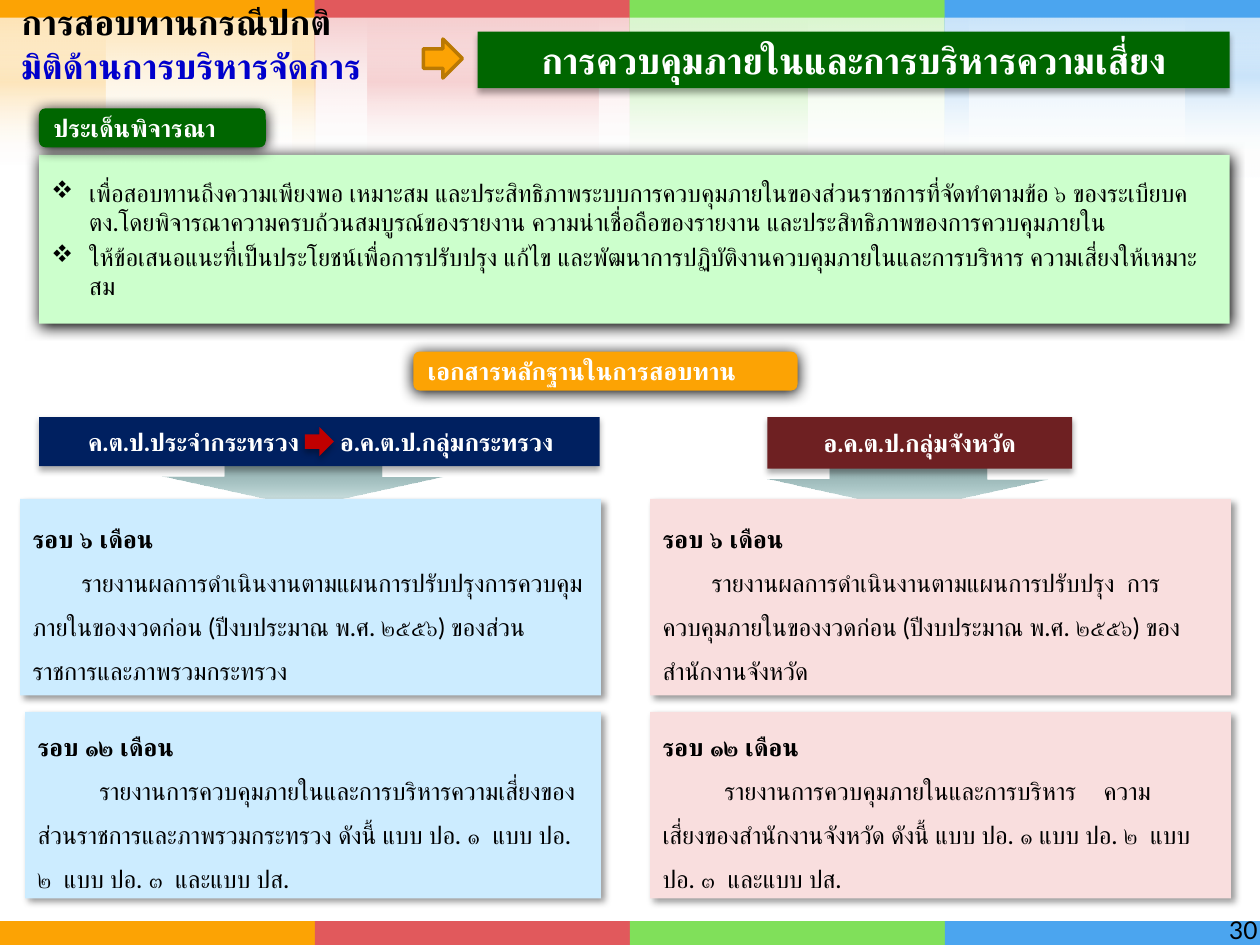
from lxml.etree import SubElement as Sub
from pptx import Presentation
from pptx.dml.color import RGBColor as Rgb
from pptx.enum.shapes import MSO_SHAPE as Kind
from pptx.enum.text import MSO_ANCHOR as Anchor, MSO_AUTO_SIZE as Auto, PP_ALIGN as Align
from pptx.oxml.ns import qn
from pptx.util import Inches, Pt

theme = dict(
    font="Lato", body=14, head=20, main=21,
    gold="FCA304", red="E1595C", lime="80E05A", sky="4BA5EF",
    black="000000", white="FFFFFF", blue="0000CC", green="006600",
    mint="CCFFCC", ice="CCECFF", rose="F9DEDE", navy="002060",
    wine="6E2022", arrow="C00000", edge="BA7903", gray="969696", teal="006666",
)
shades = dict(soft=(32, 3.5, 2.2, 90), card=(40, 4, 3, 45), hard=(100, 8.5, 1, 90))


def draw(kind, box, fill, shade=None):
    shape = slide.shapes.add_shape(kind, *map(Inches, box))
    shape.shadow.inherit = False
    shape.line.fill.background()
    props = shape._element.spPr
    if isinstance(fill, str):
        shape.fill.solid()
        shape.fill.fore_color.rgb = Rgb.from_string(theme[fill])
    else:
        shape.fill.gradient()
        shape.fill.gradient_angle = 270
        stops = props.find(qn("a:gradFill")).find(qn("a:gsLst"))
        for stop in list(stops):
            stops.remove(stop)
        for place, name, alpha in fill:
            stop = Sub(stops, qn("a:gs"), pos=str(place * 1000))
            tint = Sub(stop, qn("a:srgbClr"), val=theme[name])
            Sub(tint, qn("a:alpha"), val=str(alpha * 1000))
    if shade:
        alpha, blur, dist, angle = shades[shade]
        cast = Sub(props.find(qn("a:effectLst")), qn("a:outerShdw"),
                   blurRad=str(Pt(blur)), dist=str(Pt(dist)),
                   dir=str(angle * 60000), rotWithShape="0")
        tint = Sub(cast, qn("a:srgbClr"), val=theme["black"])
        Sub(tint, qn("a:alpha"), val=str(alpha * 1000))
    return shape


def write(shape, lines, anchor=Anchor.MIDDLE, wrap=True):
    frame = shape.text_frame
    for key, val in dict(word_wrap=wrap, auto_size=Auto.NONE, vertical_anchor=anchor).items():
        setattr(frame, key, val)
    for num, (text, look) in enumerate(lines):
        para = frame.add_paragraph() if num else frame.paragraphs[0]
        para.text = text
        props = para._p.get_or_add_pPr()
        first, left = look.get("first", 0), look.get("left", 0)
        props.set("marL", str(Inches(left)))
        props.set("indent", str(Inches(first)))
        form = dict(alignment=look.get("align", Align.LEFT), line_spacing=look.get("space", 1.0),
                    space_before=Pt(look.get("gap", 0) if num else 0))
        for key, val in form.items():
            setattr(para, key, val)
        if "bullet" in look:
            Sub(props, qn("a:buFont"), typeface="Wingdings", charset="2")
            Sub(props, qn("a:buChar"), char=look["bullet"])
        if "tab" in look:
            tabs = Sub(props, qn("a:tabLst"))
            Sub(tabs, qn("a:tab"), pos=str(Inches(look["tab"])), algn="l")
        form = dict(name=theme["font"], size=Pt(look.get("size", theme["body"])),
                    bold=look.get("bold", False))
        for run in para.runs:
            for key, val in form.items():
                setattr(run.font, key, val)
            run.font.color.rgb = Rgb.from_string(theme[look.get("color", "black")])


deck = Presentation()
deck.slide_width, deck.slide_height = Inches(10), Inches(7.5)
slide = deck.slides.add_slide(deck.slide_layouts[5])

bands = [
    ("gold", 1.31, [(2.32, 0.18, 1.31), (0, 0.84, 1.31)]),
    ("red", 1.31, [(2.92, 1.83, 1.31)]),
    ("lime", 1.37, [(5, 1.41, 1.37)]),
    ("sky", 1.43, [(7.5, 0.19, 1.22), (9.41, 0.59, 1.22)]),
]
for num, (hue, high, stripes) in enumerate(bands):
    left = num * 2.5
    fade = [(0, hue, 20), (100, "white", 0)]
    glow = [(0, "white", 0), (50, hue, 20), (100, "white", 0)]
    draw(Kind.RECTANGLE, (left, 0, 2.5, high), fade)
    for x, wide, tall in stripes:
        draw(Kind.RECTANGLE, (x, 0, wide, tall), glow)
    draw(Kind.RECTANGLE, (left, 0, 2.5, high), fade)
    for top, tall in [(0, 0.14), (7.31, 0.19)]:
        draw(Kind.RECTANGLE, (left, top, 2.5, tall), hue)

for left, top in [(6.09, 3.54), (1.29, 3.52)]:
    down = draw(Kind.DOWN_ARROW, (left, top, 2.23, 0.5), [(0, "gray", 100), (100, "teal", 10)])
    down.adjustments[0], down.adjustments[1] = 0.56, 0.48

page = slide.shapes.add_textbox(*map(Inches, (8.86, 7.21, 1.22, 0.44)))
write(page, [("30", dict(align=Align.RIGHT))], Anchor.TOP)

label = dict(bold=True, color="white")
mid = dict(label, align=Align.CENTER)
banner = draw(Kind.RECTANGLE, (3.79, 0.25, 5.97, 0.45), "green", "soft")
write(banner, [("การควบคุมภายในและการบริหารความเสี่ยง", dict(mid, size=theme["main"]))], Anchor.TOP)

point = draw(Kind.RIGHT_ARROW, (3.36, 0.31, 0.31, 0.31), "gold")
point.line.color.rgb = Rgb.from_string(theme["edge"])
point.line.width = Pt(2)

item = dict(left=0.3, first=-0.3, gap=3, bullet="v")
goals = draw(Kind.RECTANGLE, (0.31, 1.23, 9.45, 1.34), "mint", "hard")
write(goals, [
    ("เพื่อสอบทานถึงความเพียงพอ เหมาะสม และประสิทธิภาพระบบการควบคุมภายในของส่วนราชการที่จัดทำตามข้อ ๖ ของระเบียบคตง.โดยพิจารณาความครบถ้วนสมบูรณ์ของรายงาน ความน่าเชื่อถือของรายงาน และประสิทธิภาพของการควบคุมภายใน", item),
    ("ให้ข้อเสนอแนะที่เป็นประโยชน์เพื่อการปรับปรุง แก้ไข และพัฒนาการปฏิบัติงานควบคุมภายในและการบริหาร ความเสี่ยงให้เหมาะสม", item),
])

tags = [
    ((0.31, 0.86, 1.8, 0.31), "green", "ประเด็นพิจารณา"),
    ((3.28, 2.79, 3.05, 0.31), "gold", "เอกสารหลักฐานในการสอบทาน"),
]
for box, fill, text in tags:
    write(draw(Kind.ROUNDED_RECTANGLE, box, fill, "hard"), [(text, label)])

team = draw(Kind.RECTANGLE, (0.31, 3.31, 4.45, 0.39), "navy", "soft")
team.text_frame.margin_left = Inches(0.39)
write(team, [("ค.ต.ป.ประจำกระทรวง\tอ.ค.ต.ป.กลุ่มกระทรวง", dict(label, tab=2))])
draw(Kind.RIGHT_ARROW, (2.42, 3.39, 0.23, 0.23), "arrow", "soft")
area = draw(Kind.RECTANGLE, (6.09, 3.31, 2.42, 0.41), "wine", "soft")
write(area, [("อ.ค.ต.ป.กลุ่มจังหวัด", mid)])

half = ("รอบ ๖ เดือน", 3.96, 1.56, 0.39)
year = ("รอบ ๑๒ เดือน", 5.65, 1.48, 0.49)
cards = [
    (half, 0.16, 4.61, "ice", "รายงานผลการดำเนินงานตามแผนการปรับปรุงการควบคุมภายในของงวดก่อน (ปีงบประมาณ พ.ศ. ๒๕๕๖) ของส่วนราชการและภาพรวมกระทรวง"),
    (year, 0.2, 4.57, "ice", "รายงานการควบคุมภายในและการบริหารความเสี่ยงของส่วนราชการและภาพรวมกระทรวง ดังนี้ แบบ ปอ. ๑  แบบ ปอ. ๒  แบบ ปอ. ๓  และแบบ ปส."),
    (half, 5.16, 4.61, "rose", "รายงานผลการดำเนินงานตามแผนการปรับปรุง  การควบคุมภายในของงวดก่อน (ปีงบประมาณ พ.ศ. ๒๕๕๖) ของสำนักงานจังหวัด"),
    (year, 5.16, 4.61, "rose", "รายงานการควบคุมภายในและการบริหาร\tความ\vเสี่ยงของสำนักงานจังหวัด ดังนี้ แบบ ปอ. ๑ แบบ ปอ. ๒  แบบ ปอ. ๓  และแบบ ปส."),
]
for (head, top, high, first), left, wide, fill, text in cards:
    look = dict(space=1.5, first=first)
    if "\t" in text:
        look["tab"] = 3.73
    card = draw(Kind.RECTANGLE, (left, top, wide, high), fill, "card")
    write(card, [(head, dict(space=1.5, bold=True)), (text, look)])

title = slide.shapes.title
for key, val in dict(left=0.07, top=0.08, width=3.29, height=0.69).items():
    setattr(title, key, Inches(val))
look = dict(size=theme["head"], bold=True, space=Pt(15), gap=10)
write(title, [
    ("การสอบทานกรณีปกติ", look),
    ("มิติด้านการบริหารจัดการ", dict(look, color="blue")),
], Anchor.TOP, False)
slide.shapes._spTree.append(title._element)

deck.save("out.pptx")
